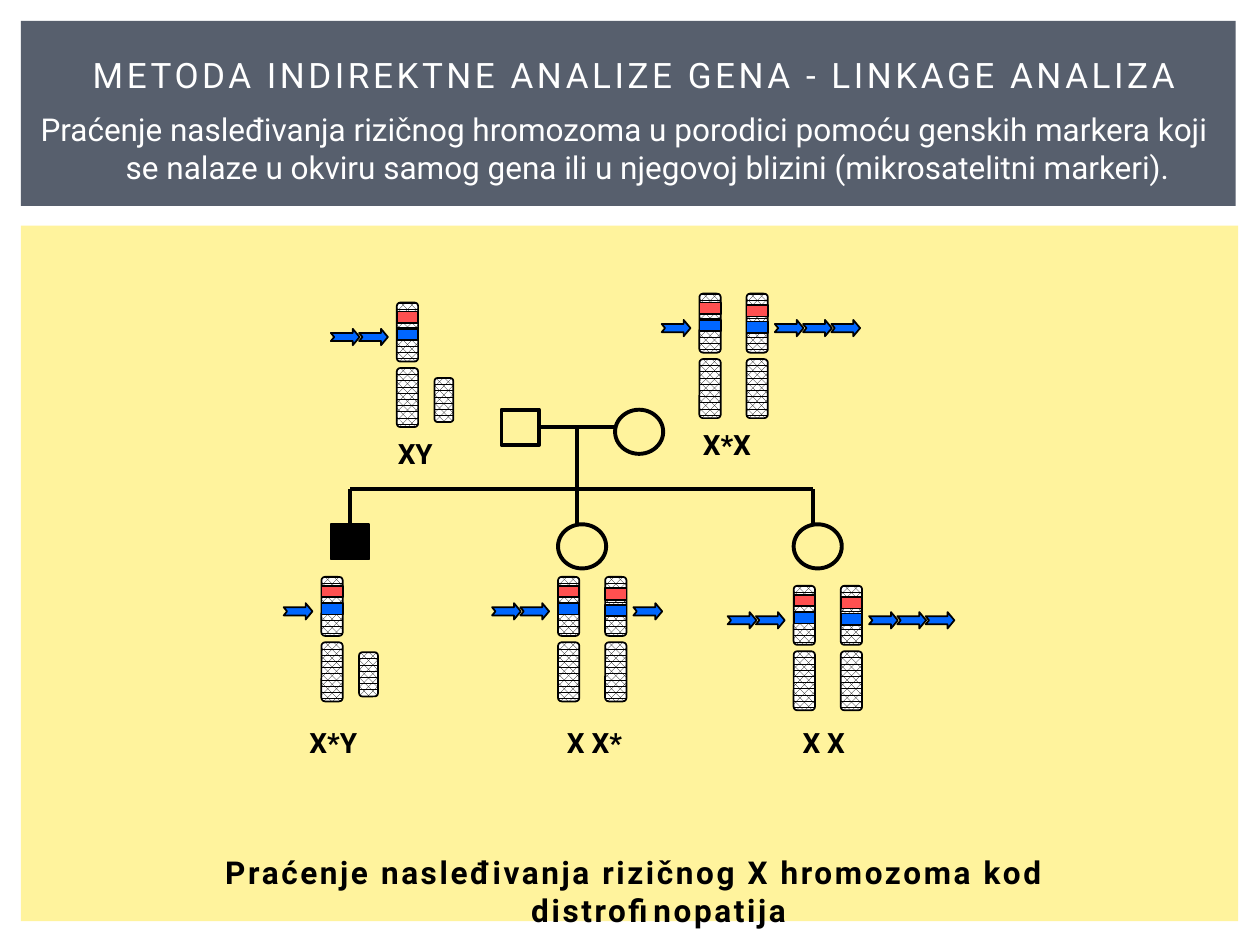
from lxml import etree
from pptx import Presentation, util as u
from pptx.dml.color import RGBColor
from pptx.enum import dml, shapes, text
from pptx.oxml.ns import qn

COLORS = {"panel": "FFF39D", "band": "575F6D", "white": "FFFFFF",
          "black": "000000", "marker": "FF5050", "allele": "0066FF"}
FONT = "Roboto"
KIND = shapes.MSO_SHAPE


def rgb(name):
    return RGBColor.from_string(COLORS[name])


def add_shape(s, kind, x, y, w, h, fill=None, line="black", weight=1):
    sp = s.shapes.add_shape(kind, u.Cm(x), u.Cm(y), u.Cm(w), u.Cm(h))
    sp.shadow.inherit = False
    if fill:
        sp.fill.solid()
        sp.fill.fore_color.rgb = rgb(fill)
    else:
        sp.fill.background()
    if line:
        sp.line.color.rgb = rgb(line)
        sp.line.width = u.Pt(weight)
    else:
        sp.line.fill.background()
    return sp


def add_line(s, x1, y1, x2, y2):
    ln = s.shapes.add_connector(shapes.MSO_CONNECTOR.STRAIGHT,
                                u.Cm(x1), u.Cm(y1), u.Cm(x2), u.Cm(y2))
    ln.line.color.rgb = rgb("black")
    ln.line.width = u.Pt(2.25)
    etree.SubElement(ln._element.spPr, qn("a:effectLst"))


def add_text(s, words, x, y, w, h, size=16, color="black", bold=False,
             center=False, spacing=0, hanging=0, wrap=True):
    tf = s.shapes.add_textbox(u.Cm(x), u.Cm(y), u.Cm(w), u.Cm(h)).text_frame
    tf.word_wrap = wrap
    p = tf.paragraphs[0]
    p.alignment = text.PP_ALIGN.CENTER if center else text.PP_ALIGN.LEFT
    if hanging:
        pPr = p._p.get_or_add_pPr()
        pPr.set("marL", str(u.Cm(hanging)))
        pPr.set("indent", str(-u.Cm(hanging)))
    r = p.add_run()
    r.text = words
    r.font.name, r.font.size, r.font.bold = FONT, u.Pt(size), bold
    r.font.color.rgb = rgb(color)
    if spacing:
        r._r.get_or_add_rPr().set("spc", str(round(spacing * 100)))


def header(s, x, y, w, h):
    add_shape(s, KIND.RECTANGLE, x, y, w, h, "band", None)
    add_text(s, "METODA INDIREKTNE ANALIZE GENA - LINKAGE ANALIZA",
             x + 0.2, y + 0.53, 24.33, 1.1, size=20, color="white",
             center=True, spacing=2)
    add_text(s, "Praćenje nasleđivanja rizičnog hromozoma u porodici pomoću "
             "genskih markera koji se nalaze u okviru samog gena ili u "
             "njegovoj blizini (mikrosatelitni markeri).",
             x, y + 1.68, 24.33, 1.8, size=18, color="white",
             center=True, hanging=0.95)


def panel(s, x, y, w, h):
    add_shape(s, KIND.RECTANGLE, x, y, w, h, "panel", None)
    add_text(s, "Praćenje nasleđivanja rizičnog X hromozoma kod distrofinopatija",
             x + 2.54, y + 12.52, 19.69, 1.77, size=18, bold=True,
             center=True, spacing=1.5, hanging=0.95)


def pedigree(s, x, y):
    sq_w, sq_h, ci_w, ci_h = 0.76, 0.71, 0.97, 0.89
    mate_y, sib_y, child_y = y + 0.35, y + 1.6, y + 2.31
    son, trunk, last = x + 0.38, x + 4.95, x + 9.7

    # Lines of descent
    add_line(s, x + 3.43 + sq_w, mate_y, x + 5.72, mate_y)
    add_line(s, trunk, mate_y, trunk, sib_y)
    add_line(s, son, sib_y, last, sib_y)
    for child in (son, trunk, last):
        add_line(s, child, sib_y, child, child_y)

    # Parents, affected son, daughters
    add_shape(s, KIND.RECTANGLE, x + 3.43, y, sq_w, sq_h, weight=2.25)
    add_shape(s, KIND.RECTANGLE, x, child_y, sq_w, sq_h, "black")
    for cx, cy in ((x + 5.72, y), (x + 4.57, child_y), (x + 9.32, child_y)):
        add_shape(s, KIND.OVAL, cx, cy, ci_w, ci_h, weight=2.25)


def arm(s, x, y, w, h):
    sp = add_shape(s, KIND.ROUNDED_RECTANGLE, x, y, w, h)
    sp.fill.patterned()
    sp.fill.pattern = dml.MSO_PATTERN.PERCENT_70
    sp.fill.fore_color.rgb = rgb("black")
    sp.fill.back_color.rgb = rgb("white")


def x_chromosome(s, x, y, red_y, blue_y):
    w = 0.43
    for dy in (0, 1.32):
        arm(s, x, y + dy, w, 1.19)
    for dy, fill in ((red_y, "marker"), (blue_y, "allele")):
        add_shape(s, KIND.RECTANGLE, x, y + dy, w, 0.23, fill)


def arrows(s, x, y, count):
    for i in range(count):
        sp = add_shape(s, KIND.NOTCHED_RIGHT_ARROW, x + i * 0.57, y,
                       0.58, 0.33, "allele")
        sp.adjustments[1] = 0.418


def genotype(s, x, y, left, right, label, label_x, label_y):
    """Chromosome pair with its repeat arrows; right=0 gives a Y."""
    x_chromosome(s, x, y, 0.18, 0.53)
    arrows(s, x - 0.76 - 0.57 * (left - 1), y + 0.53, left)
    if right:
        x_chromosome(s, x + 0.95, y, 0.23, 0.56)
        arrows(s, x + 1.52, y + 0.53, right)
    else:
        arm(s, x + 0.76, y + 1.52, 0.38, 0.89)
    add_text(s, label, x + label_x, y + label_y, 2, 0.94, bold=True, wrap=False)


def main():
    prs = Presentation()
    prs.slide_width, prs.slide_height = u.Cm(25.4), u.Cm(19.05)
    s = prs.slides.add_slide(prs.slide_layouts[6])

    panel(s, 0.42, 4.55, 24.54, 14.02)
    header(s, 0.42, 0.42, 24.49, 3.73)
    pedigree(s, 6.68, 8.26)

    # x, y, arrows left, arrows right, label and its offset
    people = [
        (8, 6.1, 2, 0, "XY", -0.23, 2.58),
        (14.1, 5.92, 1, 3, "X*X", -0.18, 2.58),
        (6.48, 11.63, 1, 0, "X*Y", -0.49, 2.87),
        (11.25, 11.63, 2, 1, "X X*", -0.07, 2.87),
        (16, 11.81, 2, 3, "X X", -0.07, 2.69),
    ]
    for person in people:
        genotype(s, *person)

    prs.save("out.pptx")


if __name__ == "__main__":
    main()
